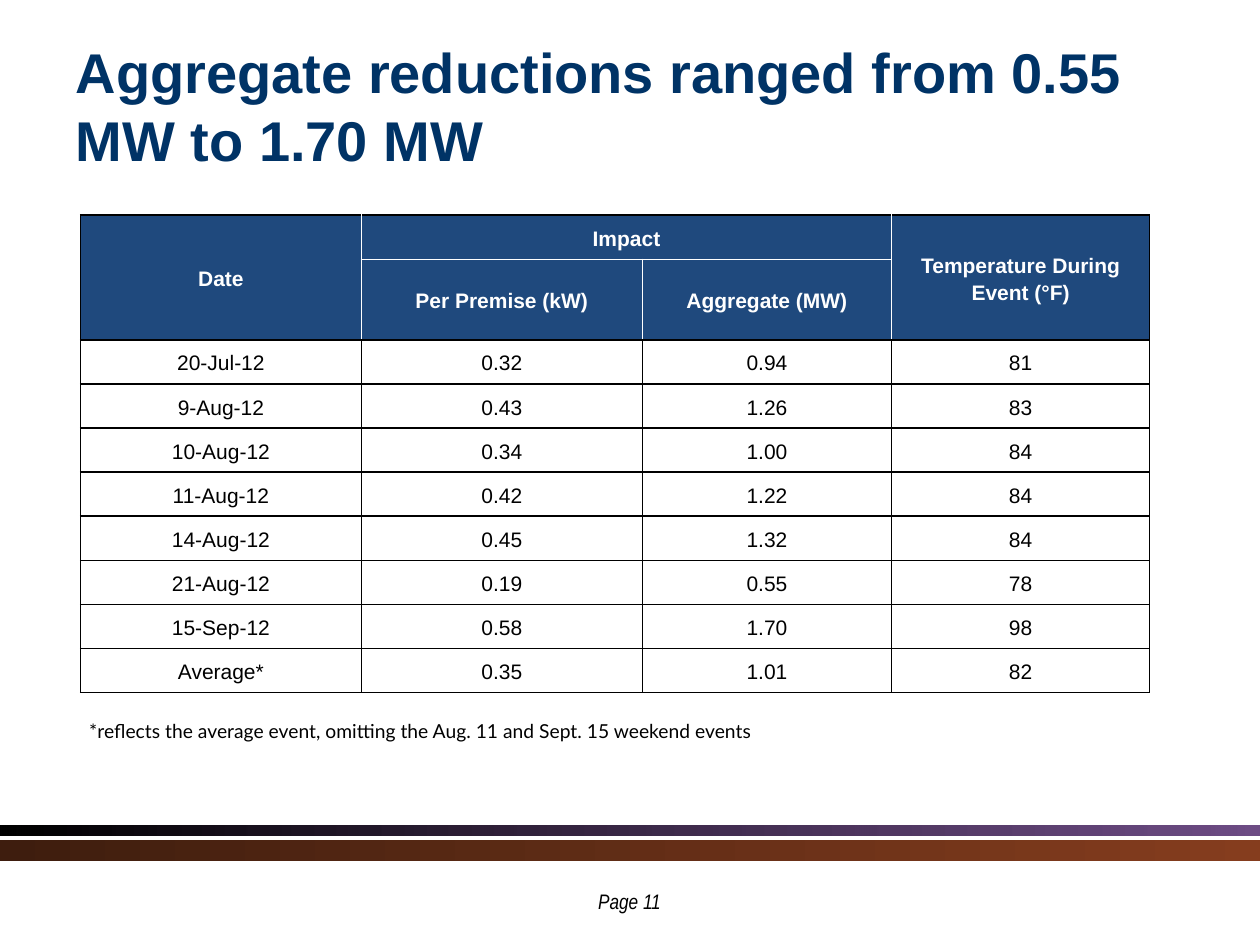
from dataclasses import dataclass
from typing import Optional

import lxml.etree
import pptx
import pptx.dml.color
import pptx.enum.shapes
import pptx.enum.text
import pptx.oxml.ns
import pptx.util

Pt = pptx.util.Pt
RGB = pptx.dml.color.RGBColor.from_string
qn = pptx.oxml.ns.qn
CENTER = pptx.enum.text.PP_ALIGN.CENTER
LEFT = pptx.enum.text.PP_ALIGN.LEFT
MIDDLE = pptx.enum.text.MSO_ANCHOR.MIDDLE


@dataclass(frozen=True)
class Theme:
    title: str = "003366"
    header: str = "1F497D"
    black: str = "000000"
    white: str = "FFFFFF"
    title_size: float = 32
    text_size: float = 12
    note_size: float = 11
    font: str = "Arial"
    note_font: str = "Lato"
    page_font: str = "Arial Narrow"


@dataclass(frozen=True)
class Bar:
    top: float
    height: float
    start: str
    end: str
    end_opacity: int = 100


@dataclass(frozen=True)
class CellStyle:
    font: str
    size: float
    color: str
    bold: bool = False
    fill: Optional[str] = None
    align: int = CENTER
    before: float = 0
    after: float = 0


@dataclass(frozen=True)
class Edges:
    left: Optional[str] = None
    right: Optional[str] = None
    top: Optional[str] = None
    bottom: Optional[str] = None


THEME = Theme()
SLIDE_WIDTH, SLIDE_HEIGHT = 720, 540
BARS = (
    Bar(471.5, 6, "000000", "542D6F", 85),
    Bar(480, 12.2, "3E1D0E", "853D1E"),
)
HEADER = CellStyle(THEME.font, THEME.text_size, THEME.white, True, THEME.header, before=5, after=5)
BODY = CellStyle(THEME.font, THEME.text_size, THEME.black, before=3, after=3)
NOTE = CellStyle(THEME.note_font, THEME.note_size, THEME.black, align=LEFT, after=6)

HEADINGS = (
    ("Date", "Impact", "", "Temperature During Event (°F)"),
    ("", "Per Premise (kW)", "Aggregate (MW)", ""),
)
EVENTS = (
    ("20-Jul-12", "0.32", "0.94", "81"),
    ("9-Aug-12", "0.43", "1.26", "83"),
    ("10-Aug-12", "0.34", "1.00", "84"),
    ("11-Aug-12", "0.42", "1.22", "84"),
    ("14-Aug-12", "0.45", "1.32", "84"),
    ("21-Aug-12", "0.19", "0.55", "78"),
    ("15-Sep-12", "0.58", "1.70", "98"),
    ("Average*", "0.35", "1.01", "82"),
)
FOOTNOTE = ("*reflects the average event, omitting the Aug. 11 and Sept. 15 weekend events", "", "", "")
COLUMN_WIDTHS = (160.5, 160.5, 142.5, 147.5)
ROW_HEIGHTS = (25.2, 46, *[25.2] * len(EVENTS), 42)


def style_font(font, name: str, size: float, color: str, bold: bool = False, italic: bool = False) -> None:
    font.name, font.size = name, Pt(size)
    font.bold, font.italic = bold, italic
    font.color.rgb = RGB(color)


def add_bar(slide, bar: Bar) -> None:
    shape = slide.shapes.add_shape(
        pptx.enum.shapes.MSO_SHAPE.RECTANGLE, 0, Pt(bar.top), Pt(SLIDE_WIDTH), Pt(bar.height))
    shape.shadow.inherit = False
    shape.line.fill.background()
    shape.fill.gradient()
    shape.fill.gradient_angle = 0
    for stop, color, position in zip(shape.fill.gradient_stops, (bar.start, bar.end), (0, 1)):
        stop.color.rgb = RGB(color)
        stop.position = position
    if bar.end_opacity < 100:
        end_color = list(shape.fill._fill._gradFill.iter(qn("a:srgbClr")))[-1]
        lxml.etree.SubElement(end_color, qn("a:alpha"), val=str(bar.end_opacity * 1000))


def set_borders(cell, edges: Edges) -> None:
    """Draw the coloured edges and hide the rest; call before filling the cell."""
    properties = cell._tc.get_or_add_tcPr()
    sides = (("L", edges.left), ("R", edges.right), ("T", edges.top), ("B", edges.bottom))
    for side, color in sides:
        line = lxml.etree.SubElement(properties, qn(f"a:ln{side}"), w=str(Pt(1)))
        if color is None:
            lxml.etree.SubElement(line, qn("a:noFill"))
        else:
            fill = lxml.etree.SubElement(line, qn("a:solidFill"))
            lxml.etree.SubElement(fill, qn("a:srgbClr"), val=color)


def fill_cell(cell, text: str, style: CellStyle, edges: Edges) -> None:
    set_borders(cell, edges)
    if style.fill:
        cell.fill.solid()
        cell.fill.fore_color.rgb = RGB(style.fill)
    else:
        cell.fill.background()
    cell.margin_left = cell.margin_right = Pt(5)
    cell.margin_top = cell.margin_bottom = 0
    cell.vertical_anchor = MIDDLE
    para = cell.text_frame.paragraphs[0]
    para.text = text
    para.alignment = style.align
    para.line_spacing = 1.15
    para.space_before, para.space_after = Pt(style.before), Pt(style.after)
    style_font(para.font, style.font, style.size, style.color, style.bold)
    for span in para.runs:
        style_font(span.font, style.font, style.size, style.color, style.bold)


def header_edges(row: int, column: int) -> Edges:
    """Black around the header block, white between its cells."""
    black, white = THEME.black, THEME.white
    last_column = len(COLUMN_WIDTHS) - 1
    return Edges(
        left=black if column == 0 else white,
        right=black if column == last_column else white,
        top=black if row == 0 else white,
        bottom=black if row == 1 or column in (0, last_column) else white,
    )


def add_impact_table(slide) -> None:
    rows = (*HEADINGS, *EVENTS, FOOTNOTE)
    table = slide.shapes.add_table(
        len(rows), len(COLUMN_WIDTHS), Pt(46), Pt(123),
        Pt(sum(COLUMN_WIDTHS)), Pt(sum(ROW_HEIGHTS))).table
    table.first_row = table.horz_banding = False
    for column, width in zip(table.columns, COLUMN_WIDTHS):
        column.width = Pt(width)
    for row, height in zip(table.rows, ROW_HEIGHTS):
        row.height = Pt(height)

    last_row, last_column = len(rows) - 1, len(COLUMN_WIDTHS) - 1
    for r, texts in enumerate(rows):
        for c, text in enumerate(texts):
            if r < len(HEADINGS):
                style, edges = HEADER, header_edges(r, c)
            elif r < last_row:
                style, edges = BODY, Edges(*[THEME.black] * 4)
            else:
                style, edges = NOTE, Edges(top=THEME.black)
            fill_cell(table.cell(r, c), text, style, edges)

    merges = (((0, 0), (1, 0)), ((0, 1), (0, 2)), ((0, last_column), (1, last_column)),
              ((last_row, 0), (last_row, last_column)))
    for first, last in merges:
        table.cell(*first).merge(table.cell(*last))


def set_title(slide, text: str) -> None:
    title = slide.shapes.title
    title.left, title.top, title.width, title.height = Pt(36), Pt(21.6), Pt(657.4), Pt(77)
    title.text_frame.text = text
    title.text_frame.vertical_anchor = MIDDLE
    para = title.text_frame.paragraphs[0]
    para.alignment = LEFT
    style_font(para.runs[0].font, THEME.font, THEME.title_size, THEME.title, bold=True)


def add_page_number(slide, text: str) -> None:
    box = slide.shapes.add_textbox(Pt(283), Pt(504), Pt(153.4), Pt(16))
    box.text_frame.word_wrap = True
    box.text_frame.text = text
    para = box.text_frame.paragraphs[0]
    para.alignment = CENTER
    style_font(para.runs[0].font, THEME.page_font, THEME.text_size, THEME.black, italic=True)


def main() -> None:
    deck = pptx.Presentation()
    deck.slide_width, deck.slide_height = Pt(SLIDE_WIDTH), Pt(SLIDE_HEIGHT)
    slide = deck.slides.add_slide(deck.slide_layouts.get_by_name("Title Only"))
    for bar in BARS:
        add_bar(slide, bar)
    set_title(slide, "Aggregate reductions ranged from 0.55 MW to 1.70 MW")
    add_page_number(slide, "Page 11")
    add_impact_table(slide)
    deck.save("out.pptx")


if __name__ == "__main__":
    main()
